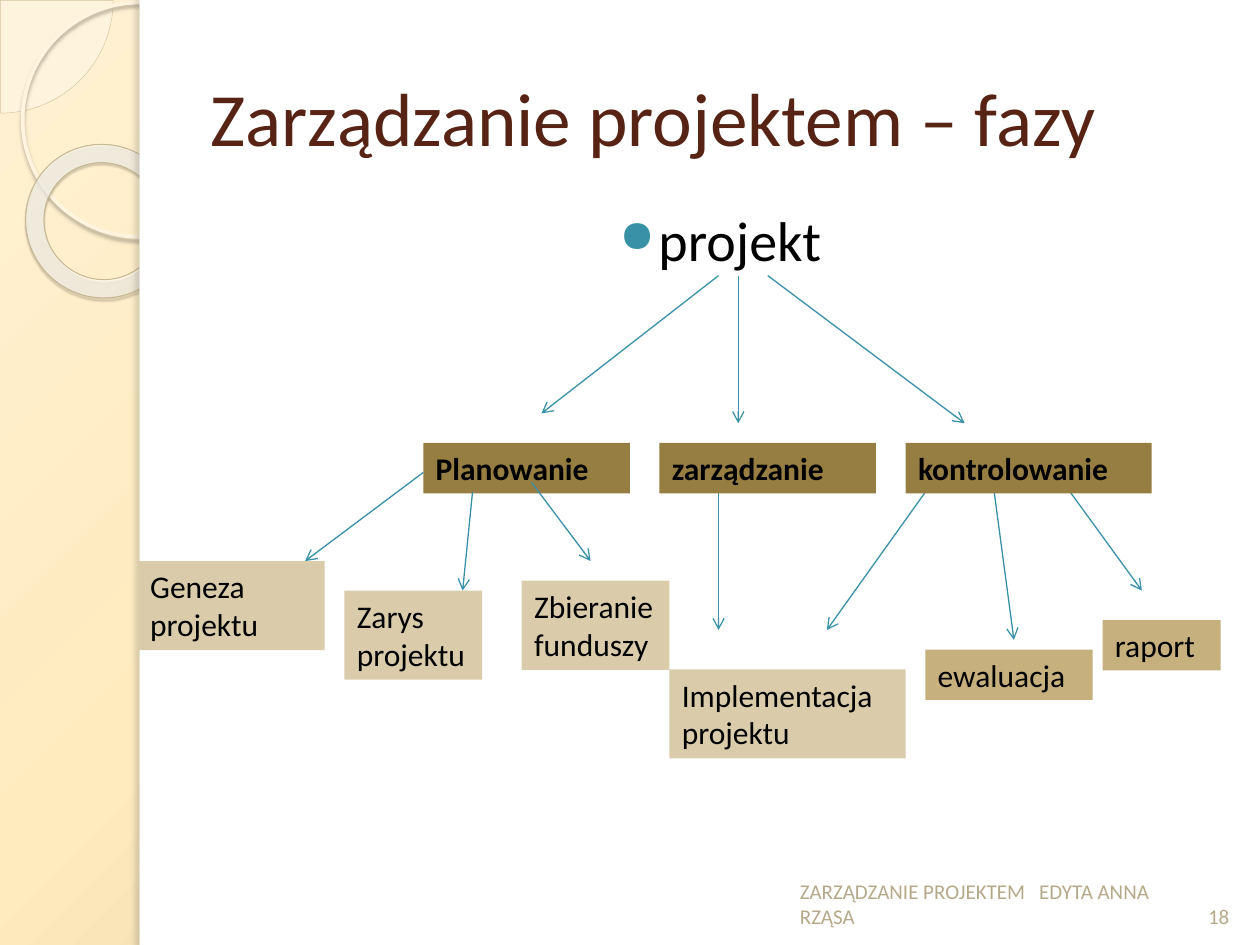
import lxml.etree
import pptx
import pptx.dml.color
import pptx.enum.shapes
import pptx.enum.text
import pptx.oxml.ns
import pptx.util

RGB = pptx.dml.color.RGBColor
SHAPE = pptx.enum.shapes.MSO_SHAPE
ALIGN = pptx.enum.text.PP_ALIGN
ANCHOR = pptx.enum.text.MSO_ANCHOR
qn = pptx.oxml.ns.qn

WHITE, BLACK = RGB(0xFF, 0xFF, 0xFF), RGB(0, 0, 0)
BROWN, TEAL, GREY = RGB(0x57, 0x23, 0x14), RGB(0x38, 0x91, 0xA7), RGB(0xB6, 0xA9, 0x8A)
PHASE, STEP, CHECK = RGB(0x96, 0x7D, 0x42), RGB(0xDA, 0xCC, 0xAB), RGB(0xC6, 0xB0, 0x7E)
CREAM, PIE_LINE = RGB(0xFE, 0xFA, 0xF4), RGB(0xD3, 0xC3, 0x9F)
CIRCLE_LINE, CIRCLE_SHADOW = RGB(0xFF, 0xF5, 0xDE), RGB(0xB0, 0xA6, 0x8F)
RING_LINE, RING_SHADOW = RGB(0xC7, 0xB8, 0x93), RGB(0x5A, 0x54, 0x44)
EDGE_SHADOW = RGB(0x73, 0x6F, 0x63)
# Gradient stops: position, colour, opacity (percent)
PAPER = [(0, RGB(0xFF, 0xF1, 0xD3), 100), (40, RGB(0xFF, 0xEB, 0xBE), 100),
         (100, RGB(0xC9, 0xB4, 0x84), 100)]
RING = [(0, RGB(0xFF, 0xFC, 0xF6), 70), (70, RGB(0xFF, 0xFE, 0xFB), 55),
        (100, RGB(0xF0, 0xD2, 0x8E), 60)]

COLUMNS, ROWS = 128, 96


def child(parent, tag, **attributes):
    return lxml.etree.SubElement(parent, qn(tag), {k: str(v) for k, v in attributes.items()})


def add_color(parent, color, opacity):
    child(child(parent, "a:srgbClr", val=color), "a:alpha", val=opacity * 1000)


class PhaseSlide:
    """Slide with a 128 x 96 grid and one text and line style."""
    font = "Calibri"
    line_width = 0.75

    def __init__(self, deck):
        self.cell_w = deck.slide_width / COLUMNS
        self.cell_h = deck.slide_height / ROWS
        self.slide = deck.slides.add_slide(deck.slide_layouts[6])
        self.shapes = self.slide.shapes

    def to_emu(self, *grid):
        """Alternating columns and rows as lengths."""
        return [round(value * (self.cell_h if i % 2 else self.cell_w))
                for i, value in enumerate(grid)]

    def radial(self, fill, stops, focus):
        """Circular gradient around a focus given in percent of the area."""
        fill.solid()
        solid = fill._xPr.find(qn("a:solidFill"))
        gradient = lxml.etree.Element(qn("a:gradFill"), rotWithShape="1")
        stop_list = child(gradient, "a:gsLst")
        for position, color, opacity in stops:
            add_color(child(stop_list, "a:gs", pos=position * 1000), color, opacity)
        x, y = focus
        child(child(gradient, "a:path", path="circle"), "a:fillToRect", l=x * 1000,
              t=y * 1000, r=(100 - x) * 1000, b=(100 - y) * 1000)
        solid.getparent().replace(solid, gradient)

    def figure(self, kind, area, fill=None, opacity=100, line=None, width=1, shadow=None):
        figure = self.shapes.add_shape(kind, *self.to_emu(*area))
        figure.shadow.inherit = False
        if fill is None:
            figure.fill.background()
        else:
            figure.fill.solid()
            figure.fill.fore_color.rgb = fill
            if opacity < 100:
                child(figure._element.spPr.find(".//" + qn("a:srgbClr")), "a:alpha",
                      val=opacity * 1000)
        if line is None:
            figure.line.fill.background()
        else:
            figure.line.color.rgb = line
            figure.line.width = pptx.util.Pt(width)
        if shadow:
            color, strength, blur, distance, angle = shadow
            outer = child(figure._element.spPr.find(qn("a:effectLst")), "a:outerShdw",
                          blurRad=pptx.util.Pt(blur), dist=pptx.util.Pt(distance),
                          dir=angle * 60000, algn="tl", rotWithShape=0)
            add_color(outer, color, strength)
        return figure

    def label(self, holder, words, size, color, bold=False, align=ALIGN.LEFT, anchor=ANCHOR.TOP):
        frame = holder.text_frame
        frame.word_wrap = True
        frame.vertical_anchor = anchor
        frame.text = words
        paragraph = frame.paragraphs[0]
        paragraph.alignment = align
        font = paragraph.runs[0].font
        font.name, font.size, font.bold = self.font, pptx.util.Pt(size), bold
        font.color.rgb = color
        return paragraph

    def text(self, area, words, size, color, **style):
        return self.label(self.shapes.add_textbox(*self.to_emu(*area)), words, size, color, **style)

    def bullet(self, paragraph, color, percent, margin, indent):
        paragraph.space_before = pptx.util.Pt(6)
        props = paragraph._p.get_or_add_pPr()
        props.set("marL", str(pptx.util.Inches(margin)))
        props.set("indent", str(pptx.util.Inches(indent)))
        child(child(props, "a:buClr"), "a:srgbClr", val=color)
        child(props, "a:buSzPct", val=percent * 1000)
        child(props, "a:buChar", char="●")

    def box(self, words, col, row, cols, fill, lines=1, bold=False):
        box = self.figure(SHAPE.RECTANGLE, (col, row, cols, 5.12 if lines == 1 else 9.05), fill)
        self.label(box, words, 18, BLACK, bold=bold)
        box.text_frame.auto_size = pptx.enum.text.MSO_AUTO_SIZE.SHAPE_TO_FIT_TEXT

    def arrow(self, start, end):
        arrow = self.shapes.add_connector(pptx.enum.shapes.MSO_CONNECTOR.STRAIGHT,
                                          *self.to_emu(*start, *end))
        arrow.line.color.rgb = TEAL
        arrow.line.width = pptx.util.Pt(self.line_width)
        child(arrow.line._get_or_add_ln(), "a:tailEnd", type="arrow")
        child(arrow._element.spPr, "a:effectLst")


def main():
    deck = pptx.Presentation()
    deck.slide_width, deck.slide_height = pptx.util.Inches(10), pptx.util.Inches(7.5)
    page = PhaseSlide(deck)

    # Decorated side strip and white panel
    page.radial(page.slide.background.fill, PAPER, (-24, -20))
    pie = page.figure(SHAPE.PIE, (-11.4, -11.4, 22.9, 22.9), CREAM, 33, PIE_LINE, 0.25)
    pie.adjustments[0], pie.adjustments[1] = 0, 54
    page.figure(SHAPE.OVAL, (2.3, 0.25, 23.8, 23.8), line=CIRCLE_LINE, width=2.15,
                shadow=(CIRCLE_SHADOW, 85, 2, 2, 90))
    ring = page.figure(SHAPE.DONUT, (2.56, 14.72, 15.75, 15.5), line=RING_LINE, width=0.58,
                       shadow=(RING_SHADOW, 35, 1, 1.2, 75))
    ring.adjustments[0] = 0.12
    ring.rotation = 38.6
    page.radial(ring.fill, RING, (-408, -50))
    page.figure(SHAPE.RECTANGLE, (14.2, 0, COLUMNS - 14.2, ROWS), WHITE)
    page.figure(SHAPE.RECTANGLE, (14.2, 0, 1, ROWS), WHITE, shadow=(EDGE_SHADOW, 25, 3, 3, 180))

    # Title and root of the tree
    page.text((20.1, 3.84, 105, 16), "Zarządzanie projektem – fazy", 43, BROWN,
              anchor=ANCHOR.MIDDLE)
    root = page.text((20.1, 20.2, 105, 67.2), "projekt", 32, BLACK, align=ALIGN.CENTER)
    page.bullet(root, TEAL, 80, 0.4, -0.31)

    # The first phase lies below the arrows, the other boxes above them
    page.box("Planowanie", 43, 45, 21, PHASE, bold=True)
    for start, end in [
            ((73, 28), (55, 42)), ((75, 28), (75, 43)), ((78, 28), (98, 43)),
            ((43, 48), (31, 57)), ((48, 50), (47, 60)), ((54, 49), (60, 57)),
            ((73, 49), (73, 64)),
            ((94, 50), (84, 64)), ((101, 50), (103, 65)), ((108, 49), (116, 60))]:
        page.arrow(start, end)
    page.box("zarządzanie", 67, 45, 22, PHASE, bold=True)
    page.box("kontrolowanie", 92, 45, 25, PHASE, bold=True)

    # Steps of each phase
    for words, col, row, cols in [
            ("Geneza projektu", 14, 57, 19), ("Zarys projektu", 35, 60, 14),
            ("Zbieranie funduszy", 53, 59, 15), ("Implementacja projektu", 68, 68, 24)]:
        page.box(words, col, row, cols, STEP, lines=2)
    page.box("ewaluacja", 94, 66, 17, CHECK)
    page.box("raport", 112, 63, 12, CHECK)

    # Footer
    page.text((120.6, 88.3, 6.4, 6.66), "18", 12, GREY, align=ALIGN.CENTER, anchor=ANCHOR.BOTTOM)
    page.text((80, 88.3, 40.6, 6.66), "ZARZĄDZANIE PROJEKTEM   EDYTA ANNA RZĄSA", 12, GREY,
              anchor=ANCHOR.BOTTOM)

    deck.save("out.pptx")


if __name__ == "__main__":
    main()
